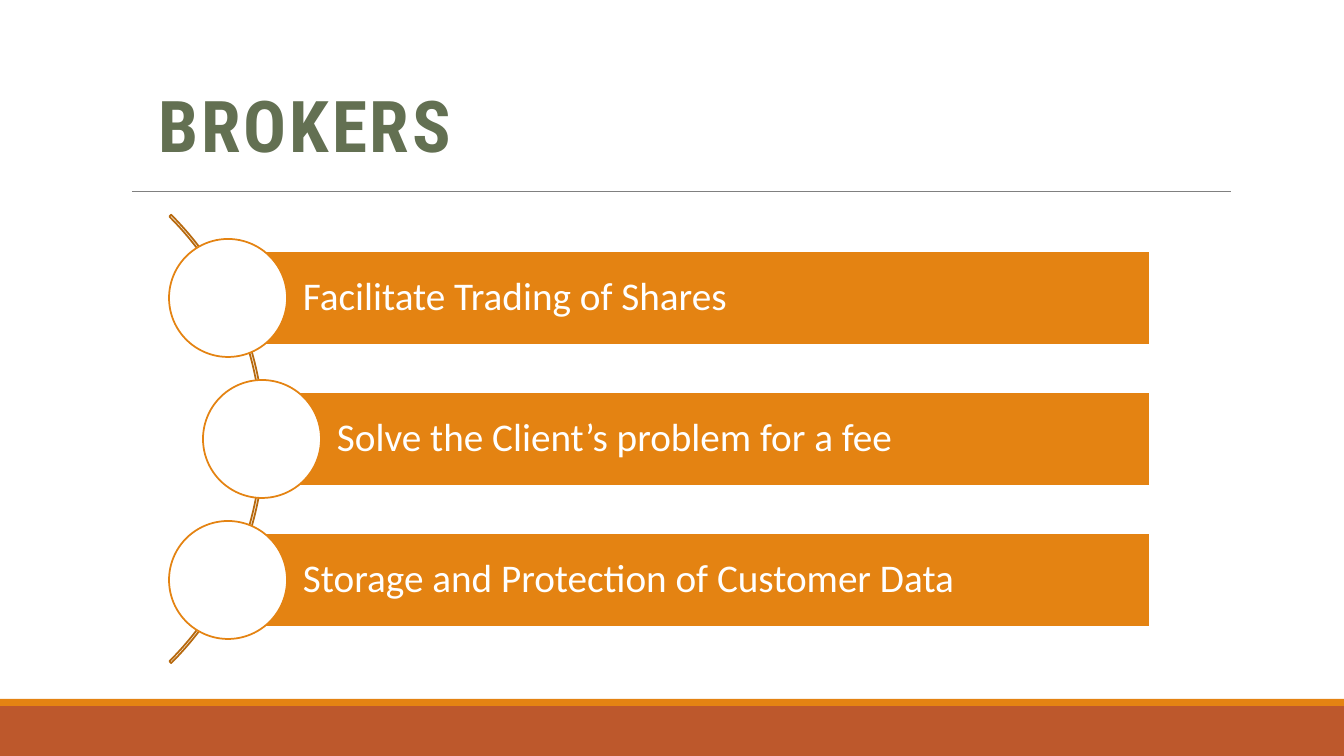
from pptx import Presentation
from pptx.dml.color import RGBColor
from pptx.enum.shapes import MSO_CONNECTOR, MSO_SHAPE
from pptx.enum.text import MSO_ANCHOR, PP_ALIGN
from pptx.oxml.ns import qn
from pptx.util import Emu, Pt
from lxml import etree

# Content
TITLE = "BROKERS"
ROLES = [
    "Facilitate Trading of Shares",
    "Solve the Client’s problem for a fee",
    "Storage and Protection of Customer Data",
]

# Colours
ORANGE, RUST, BROWN = "E48312", "BD582C", "B7690E"
GREEN, GREY, WHITE = "637052", "808080", "FFFFFF"

# Layout in px
WIDTH, HEIGHT = 1344, 756
FOOTER_TOP, STRIP_HEIGHT = 706, 7
CENTER_Y, PITCH = 439, 141
CIRCLE, BAR_HEIGHT, BAR_RIGHT = 118, 94, 1150
CENTER_X, MIDDLE_SHIFT = 228, 34
ARC_LEFT, ARC_SIZE = -370, 634


def px(value):
    return Emu(round(value * 914400 / 100.8))


def color(value):
    return RGBColor.from_string(value)


def add_shape(kind, left, top, width, height, fill=None, line=None):
    shape = slide.shapes.add_shape(kind, px(left), px(top), px(width), px(height))
    shape.shadow.inherit = False
    if fill:
        shape.fill.solid()
        shape.fill.fore_color.rgb = color(fill)
    else:
        shape.fill.background()
    if line:
        shape.line.color.rgb = color(line)
        shape.line.width = Pt(1.25)
    else:
        shape.line.fill.background()
    return shape


def write_text(shape, text, font, size, ink, anchor, spacing):
    frame = shape.text_frame
    frame.word_wrap = True
    frame.vertical_anchor = anchor
    paragraph = frame.paragraphs[0]
    paragraph.alignment = PP_ALIGN.LEFT
    paragraph.line_spacing = spacing
    run = paragraph.add_run()
    run.text = text
    run.font.name = font
    run.font.size = Pt(size)
    run.font.color.rgb = color(ink)
    return run


presentation = Presentation()
presentation.slide_width, presentation.slide_height = px(WIDTH), px(HEIGHT)
slide = presentation.slides.add_slide(presentation.slide_layouts[6])

# Footer bands
add_shape(MSO_SHAPE.RECTANGLE, 0, FOOTER_TOP, WIDTH, HEIGHT - FOOTER_TOP, RUST)
add_shape(MSO_SHAPE.RECTANGLE, 0, FOOTER_TOP - STRIP_HEIGHT, WIDTH, STRIP_HEIGHT, ORANGE)

# Title and the rule below it
title = slide.shapes.add_textbox(px(149), px(0), px(1100), px(172))
title_run = write_text(title, TITLE, "Roboto Condensed", 51, GREEN, MSO_ANCHOR.BOTTOM, 0.85)
title_run.font.bold = True
title_run.font._element.set("spc", "200")

rule = slide.shapes.add_connector(MSO_CONNECTOR.STRAIGHT, px(132), px(191), px(1231), px(191))
rule.line.color.rgb = color(GREY)
rule.line.width = Pt(0.5)
etree.SubElement(rule._element.spPr, qn("a:effectLst"))

# Arc behind the circles
arc = add_shape(MSO_SHAPE.BLOCK_ARC, ARC_LEFT, CENTER_Y - ARC_SIZE / 2,
                ARC_SIZE, ARC_SIZE, line=BROWN)
for index, value in enumerate((189, 27, 0.004)):
    arc.adjustments[index] = value

# Bars, each starting at the centre of its circle
middle = len(ROLES) // 2
for index, role in enumerate(ROLES):
    x = CENTER_X + (MIDDLE_SHIFT if index == middle else 0)
    y = CENTER_Y + (index - middle) * PITCH
    bar = add_shape(MSO_SHAPE.RECTANGLE, x, y - BAR_HEIGHT / 2,
                    BAR_RIGHT - x, BAR_HEIGHT, ORANGE, WHITE)
    frame = bar.text_frame
    frame.margin_left = px(75)
    frame.margin_top = frame.margin_right = frame.margin_bottom = px(8)
    write_text(bar, role, "Calibri", 28, WHITE, MSO_ANCHOR.MIDDLE, 0.9)
    add_shape(MSO_SHAPE.OVAL, x - CIRCLE / 2, y - CIRCLE / 2, CIRCLE, CIRCLE, WHITE, ORANGE)

presentation.save("out.pptx")
